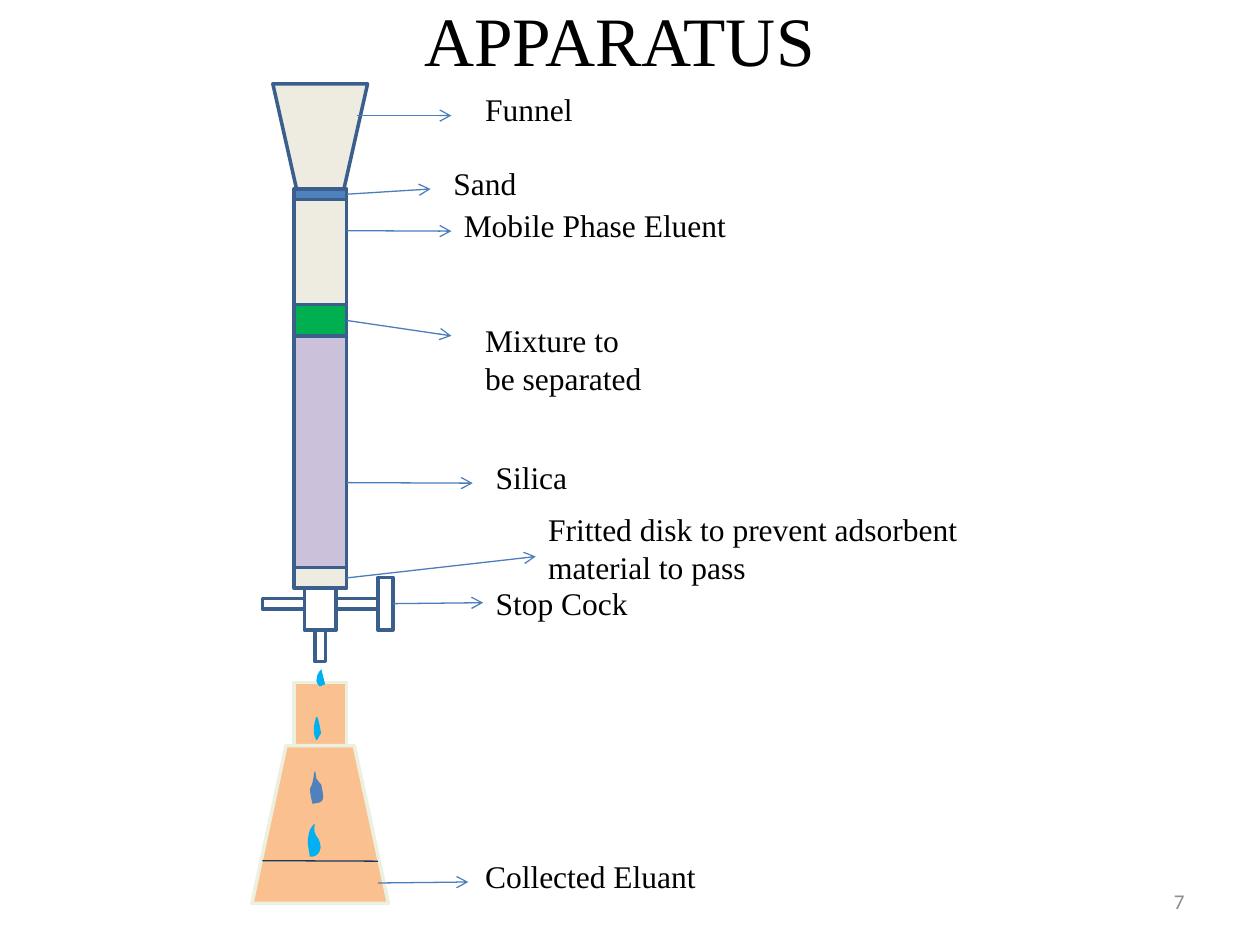
import pptx
import pptx.dml.color
import pptx.enum.shapes
import pptx.enum.text
import pptx.oxml.ns
import pptx.util
from lxml import etree

Cm = pptx.util.Cm
Pt = pptx.util.Pt
RGBColor = pptx.dml.color.RGBColor
KIND = pptx.enum.shapes.MSO_SHAPE
ALIGN = pptx.enum.text.PP_ALIGN
ANCHOR = pptx.enum.text.MSO_ANCHOR
qn = pptx.oxml.ns.qn

BLACK = RGBColor(0x00, 0x00, 0x00)
WHITE = RGBColor(0xFF, 0xFF, 0xFF)
GRAY = RGBColor(0x8C, 0x8C, 0x8C)
CREAM = RGBColor(0xEE, 0xEC, 0xE1)
BLUE = RGBColor(0x4F, 0x81, 0xBD)
GREEN = RGBColor(0x00, 0xB0, 0x50)
LILAC = RGBColor(0xCC, 0xC1, 0xDA)
PEACH = RGBColor(0xFA, 0xC0, 0x90)
SKY = RGBColor(0x00, 0xB0, 0xF0)
STEEL = RGBColor(0x3A, 0x5F, 0x8C)
PALE = RGBColor(0xEB, 0xF1, 0xDE)
NAVY = RGBColor(0x17, 0x37, 0x5E)
ARROW = RGBColor(0x4B, 0x7E, 0xBC)
SERIF = "Times New Roman"

# Tube layers from top to bottom: name, height in cm, fill
LAYERS = [
    ("sand", 0.21, BLUE),
    ("eluent", 2.12, CREAM),
    ("mixture", 0.64, GREEN),
    ("silica", 4.66, LILAC),
    ("frit", 0.42, CREAM),
]

# Stopcock parts: name, left, top, width, height in cm
VALVE = [
    ("body", 0.85, 10.16, 0.64, 0.85),
    ("rod", 1.48, 10.38, 0.85, 0.21),
    ("handle", 2.33, 9.95, 0.3, 1.06),
    ("arm", 0, 10.38, 0.85, 0.21),
    ("tip", 1.06, 11.01, 0.21, 0.64),
]

# Drops: left, top in cm, fill, start point, Bezier segments in GRAIN units
GRAIN = 0.0254
DROPS = [
    (1.22, -0.27, SKY, (7, 0),
     [(6, 1, 0, 8, 5, 13), (6, 15, 8, 12, 10, 12), (8, 4, 7, 0, 7, 0)]),
    (1.19, 0.67, SKY, (4, 1),
     [(4, 2, 0, 12, 4, 19), (5, 21, 6, 16, 8, 14), (6, 2, 5, 0, 4, 1)]),
    (1.17, 1.76, BLUE, (4, 1),
     [(3, 1, 3, 7, 2, 10), (2, 12, 0, 14, 0, 15), (0, 19, 1, 23, 2, 27),
      (4, 26, 7, 27, 9, 25), (12, 23, 9, 14, 9, 12), (8, 10, 6, 9, 5, 7),
      (5, 6, 4, 0, 4, 1)]),
    (1.09, 2.85, SKY, (7, 0),
     [(6, 0, 4, 3, 3, 5), (0, 15, 2, 17, 3, 26), (5, 26, 7, 26, 8, 25),
      (13, 21, 12, 17, 10, 12), (9, 10, 7, 9, 7, 7), (6, 5, 7, 1, 7, 0)]),
]

# Labels: text, text box, arrow start, arrow end in cm, part joined
LABELS = [
    ("Funnel", (2.54, 0, 3.6, 1.06), (0.21, 0.64), (2.11, 0.64), None),
    ("Sand", (1.9, 1.49, 2.33, 1.02), (0, 2.22), (1.69, 2.12), "sand"),
    ("Mobile Phase Eluent", (2.11, 2.33, 6.14, 1.02), (0, 2.96), (2.11, 2.97), None),
    ("Mixture to be separated", (2.54, 4.66, 3.81, 1.8), (0, 4.77), (2.11, 5.08), "mixture"),
    ("Silica", (2.75, 7.41, 2.33, 1.02), (0, 8.04), (2.54, 8.05), None),
    ("Fritted disk to prevent adsorbent material to pass", (3.81, 8.47, 8.89, 1.8),
     (0, 9.95), (3.81, 9.53), "frit"),
    ("Stop Cock", (2.75, 9.95, 4.45, 1.02), (0.95, 10.48), (2.75, 10.46), "handle"),
    ("Collected Eluant", (2.54, 15.46, 4.87, 1.02), (0.63, 16.11), (2.45, 16.09), None),
]


def add_text(slide, box, text, size, font=SERIF, color=BLACK,
             align=ALIGN.LEFT, anchor=ANCHOR.TOP):
    frame = slide.shapes.add_textbox(*map(Cm, box)).text_frame
    frame.word_wrap = True
    frame.vertical_anchor = anchor
    para = frame.paragraphs[0]
    para.alignment = align
    run = para.add_run()
    run.text = text
    run.font.name = font
    run.font.size = Pt(size)
    run.font.color.rgb = color


def add_part(slide, kind, box, fill, line):
    part = slide.shapes.add_shape(kind, *map(Cm, box))
    part.shadow.inherit = False
    part.fill.solid()
    part.fill.fore_color.rgb = fill
    part.line.color.rgb = line
    part.line.width = Pt(2)
    return part


def add_line(slide, start, end, color, head=False):
    line = slide.shapes.add_connector(
        pptx.enum.shapes.MSO_CONNECTOR.STRAIGHT, *map(Cm, start + end))
    line.line.color.rgb = color
    line.line.width = Pt(0.75)
    if head:
        etree.SubElement(line.line._get_or_add_ln(), qn("a:tailEnd"), type="arrow")
    etree.SubElement(line._element.spPr, qn("a:effectLst"))
    return line


def bend(shape, curves, left, top):
    """Turn each straight segment of the outline into its Bezier curve."""
    for edge, curve in zip(list(shape._element.iter(qn("a:lnTo"))), curves):
        arc = etree.Element(qn("a:cubicBezTo"))
        for x, y in zip(curve[::2], curve[1::2]):
            etree.SubElement(arc, qn("a:pt"), x=str(Cm((x - left) * GRAIN)),
                             y=str(Cm((y - top) * GRAIN)))
        edge.getparent().replace(edge, arc)


def add_drop(slide, left, top, fill, start, curves):
    knots = [start] + [curve[4:] for curve in curves]
    points = [(Cm(x * GRAIN), Cm(y * GRAIN)) for x, y in knots]
    pen = slide.shapes.build_freeform(*points[0])
    pen.add_line_segments(points[1:], close=True)
    drop = pen.convert_to_shape(Cm(left), Cm(top))
    bend(drop, curves, min(x for x, _ in knots), min(y for _, y in knots))
    drop.shadow.inherit = False
    drop.fill.solid()
    drop.fill.fore_color.rgb = fill
    drop.line.fill.background()


def add_column(slide, left, top):
    """Draw funnel, tube and stopcock; return the parts by name."""
    parts = {}
    funnel = add_part(slide, KIND.TRAPEZOID, (left + 0.21, top, 1.91, 2.12), CREAM, STEEL)
    funnel.rotation = 180
    y = top + 2.12
    for name, height, fill in LAYERS:
        parts[name] = add_part(slide, KIND.RECTANGLE,
                               (left + 0.64, y, 1.06, height), fill, STEEL)
        y += height
    for name, x, y, width, height in VALVE:
        parts[name] = add_part(slide, KIND.RECTANGLE,
                               (left + x, top + y, width, height), WHITE, STEEL)
    return parts


def add_flask(slide, left, top):
    add_part(slide, KIND.RECTANGLE, (left + 0.85, top, 1.06, 1.27), PEACH, PALE)
    add_part(slide, KIND.TRAPEZOID, (left, top + 1.27, 2.75, 3.18), PEACH, PALE)
    add_line(slide, (left + 0.21, top + 3.59), (left + 2.54, top + 3.6), NAVY)
    for x, y, fill, start, curves in DROPS:
        add_drop(slide, left + x, top + y, fill, start, curves)


def add_labels(slide, left, top, parts):
    for text, (x, y, width, height), start, end, name in LABELS:
        line = add_line(slide, (left + start[0], top + start[1]),
                        (left + end[0], top + end[1]), ARROW, head=True)
        if name:
            line.begin_connect(parts[name], 3)
        add_text(slide, (left + x, top + y, width, height), text, 18)


def main():
    deck = pptx.Presentation()
    deck.slide_width, deck.slide_height = Cm(25.4), Cm(19.05)
    slide = deck.slides.add_slide(deck.slide_layouts[6])
    add_text(slide, (1.06, 0, 22.86, 1.57), "APPARATUS", 39.6,
             align=ALIGN.CENTER, anchor=ANCHOR.MIDDLE)
    add_text(slide, (18.21, 17.65, 5.92, 1.02), "7", 12, "Calibri", GRAY,
             ALIGN.RIGHT, ANCHOR.MIDDLE)
    parts = add_column(slide, 5.29, 1.69)
    add_flask(slide, 5.08, 13.76)
    add_labels(slide, 6.99, 1.69, parts)
    deck.save("out.pptx")


if __name__ == "__main__":
    main()
